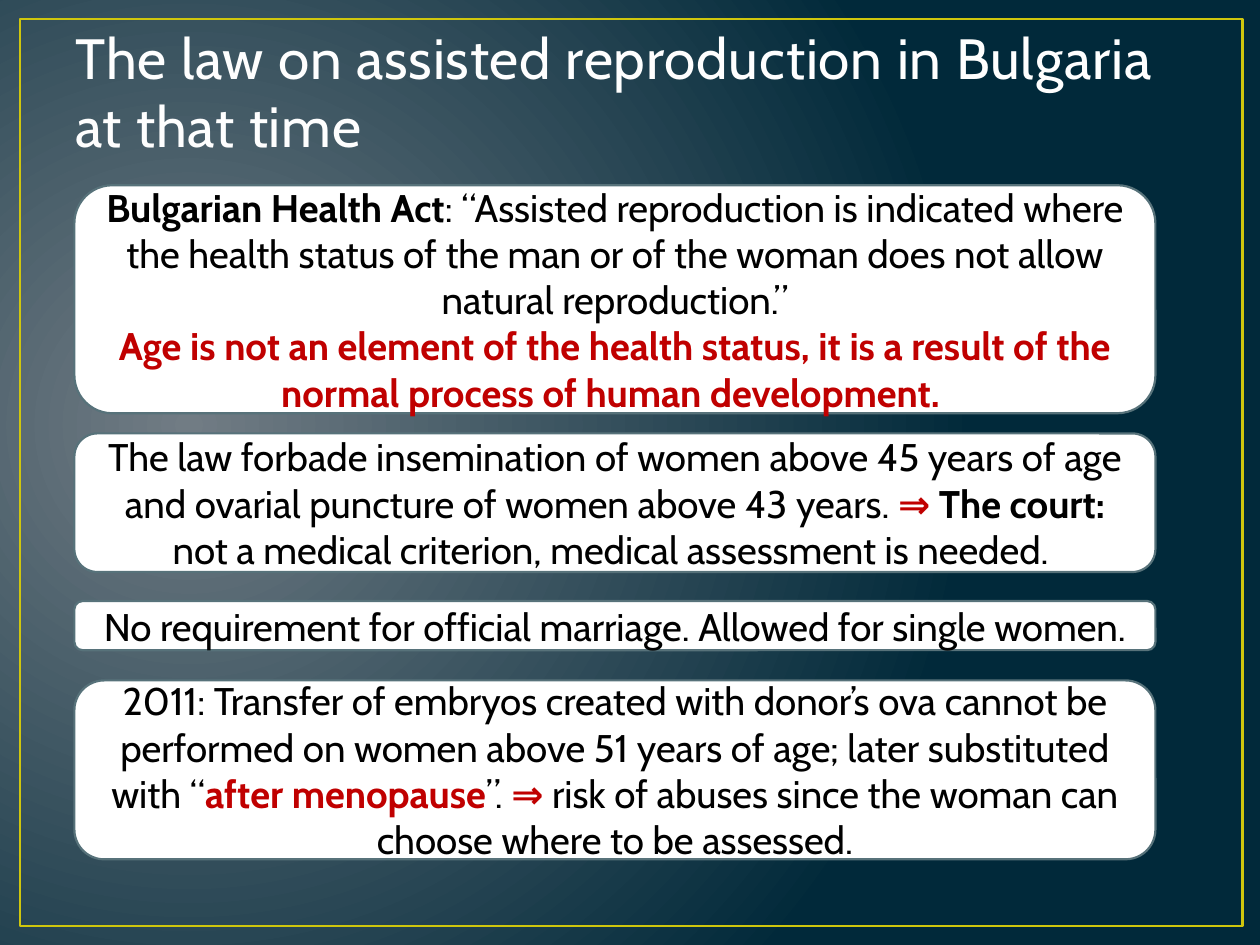
"""Build a slide on the Bulgarian law on assisted reproduction."""
from lxml import etree
from pptx import Presentation
from pptx.dml.color import RGBColor
from pptx.enum.shapes import MSO_SHAPE
from pptx.enum.text import MSO_ANCHOR, PP_ALIGN
from pptx.oxml.ns import qn
from pptx.util import Inches, Pt

RECTANGLE = MSO_SHAPE.RECTANGLE
ROUNDED = MSO_SHAPE.ROUNDED_RECTANGLE
MIDDLE, BOTTOM = MSO_ANCHOR.MIDDLE, MSO_ANCHOR.BOTTOM
CENTER = PP_ALIGN.CENTER

FONT = "Cabin"
WHITE, BLACK, RED = "FFFFFF", "000000", "C00000"
PLAIN, BOLD, ALERT = (BLACK, False), (BLACK, True), (RED, True)
GRADIENT = ["717C84", "01293A"]
GRADIENT_FOCUS = {"l": 15, "t": 50, "r": 85, "b": 60}
TITLE = "The law on assisted reproduction in Bulgaria at that time"
CARD_LEFT, CARD_WIDTH = 0.59, 8.58

CARDS = [
    (1.47, 1.81, [
        [("Bulgarian Health Act", BOLD),
         (": “Assisted reproduction is indicated where the health status of the man "
          "or of the woman does not allow natural reproduction.”", PLAIN)],
        [("Age is not an element of the health status, it is a result of the normal "
          "process of human development. ", ALERT)],
    ]),
    (3.44, 1.1, [
        [("The law forbade insemination of women above 45 years of age and ovarial "
          "puncture of women above 43 years. ", PLAIN),
         ("⇒ ", ALERT),
         ("The court: ", BOLD),
         ("not a medical criterion, medical assessment is needed. ", PLAIN)],
    ]),
    (4.77, 0.39, [
        [("No requirement for official marriage. Allowed for single women.", PLAIN)],
    ]),
    (5.4, 1.42, [
        [("2011: Transfer of embryos created with donor’s ova cannot be performed on "
          "women above 51 years of age; later substituted with “", PLAIN),
         ("after menopause", ALERT),
         ("”. ", PLAIN),
         ("⇒", ALERT),
         (" risk of abuses since the woman can choose where to be assessed.", PLAIN)],
    ]),
]


def color(value):
    return RGBColor.from_string(value)


def style_run(run, size, value, bold=False):
    run.font.name = FONT
    run.font.size = Pt(size)
    run.font.bold = bold
    run.font.color.rgb = color(value)


def paint_background(slide):
    fill = slide.background.fill
    fill.gradient()
    for stop, value in zip(fill.gradient_stops, GRADIENT):
        stop.color.rgb = color(value)
    gradient = slide.element.find(".//" + qn("a:gradFill"))
    gradient.remove(gradient.find(qn("a:lin")))
    circle = etree.SubElement(gradient, qn("a:path"), {"path": "circle"})
    focus = {side: str(percent * 1000) for side, percent in GRADIENT_FOCUS.items()}
    etree.SubElement(circle, qn("a:fillToRect"), focus)


def add_outlined_shape(slide, kind, box, line, width):
    shape = slide.shapes.add_shape(kind, *map(Inches, box))
    shape.shadow.inherit = False
    shape.fill.background()
    shape.line.color.rgb = color(line)
    shape.line.width = Pt(width)
    return shape


def add_title(slide):
    title = slide.shapes.add_textbox(*map(Inches, (0.5, 0.3, 9, 1.01)))
    frame = title.text_frame
    frame.word_wrap = True
    frame.vertical_anchor = BOTTOM
    frame.text = TITLE
    run = frame.paragraphs[0].runs[0]
    style_run(run, 32.4, "FEFEFE")
    run.font._element.set("spc", "50")


def add_card(slide, top, height, paragraphs):
    box = CARD_LEFT, top, CARD_WIDTH, height
    card = add_outlined_shape(slide, ROUNDED, box, "57727A", 1.25)
    card.fill.solid()
    card.fill.fore_color.rgb = color(WHITE)
    frame = card.text_frame
    frame.word_wrap = True
    frame.vertical_anchor = MIDDLE
    for index, pieces in enumerate(paragraphs):
        paragraph = frame.add_paragraph() if index else frame.paragraphs[0]
        paragraph.alignment = CENTER
        for text, (value, bold) in pieces:
            run = paragraph.add_run()
            run.text = text
            style_run(run, 22, value, bold)


def main():
    presentation = Presentation()
    presentation.slide_width, presentation.slide_height = Inches(10), Inches(7.5)
    slide = presentation.slides.add_slide(presentation.slide_layouts[6])
    paint_background(slide)
    add_outlined_shape(slide, RECTANGLE, (0.16, 0.15, 9.7, 7.2), "CFC60D", 1.5)
    add_title(slide)
    for card in CARDS:
        add_card(slide, *card)
    presentation.save("out.pptx")


if __name__ == "__main__":
    main()
